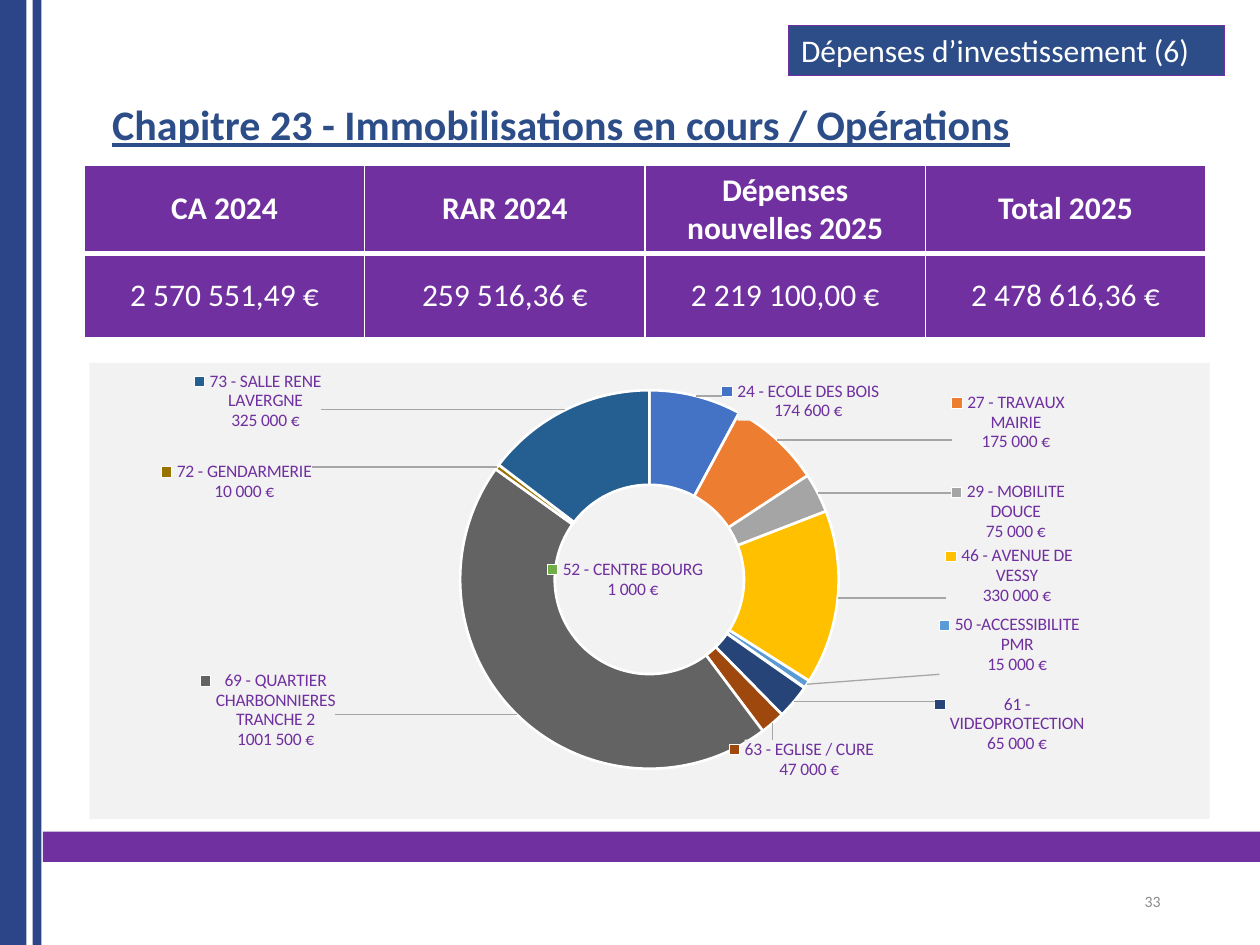
import copy
import math

import lxml.etree
import pptx
import pptx.chart.data
import pptx.dml.color
import pptx.enum.chart
import pptx.enum.shapes
import pptx.enum.text
import pptx.oxml
import pptx.oxml.ns
import pptx.util

Inches = pptx.util.Inches
Pt = pptx.util.Pt
RGBColor = pptx.dml.color.RGBColor
Align = pptx.enum.text.PP_ALIGN
Anchor = pptx.enum.text.MSO_ANCHOR

PURPLE = RGBColor(0x70, 0x30, 0xA0)
BAR_BLUE = RGBColor(0x2C, 0x45, 0x88)
TITLE_BLUE = RGBColor(0x2C, 0x4D, 0x88)
WHITE = RGBColor(0xFF, 0xFF, 0xFF)
GREY = RGBColor(0x8C, 0x8C, 0x8C)
LEADER_GREY = RGBColor(0xA6, 0xA6, 0xA6)
PALE = RGBColor(0xF2, 0xF2, 0xF2)
BLACK = RGBColor(0, 0, 0)
NAMESPACES = pptx.oxml.ns.nsdecls("c", "a")


def format_font(font, color, **formats):
    font.color.rgb = color
    for name, value in {"name": "Calibri", **formats}.items():
        setattr(font, name, value)


def add_bar(left, top, width, height, color):
    bar = page.shapes.add_shape(
        pptx.enum.shapes.MSO_SHAPE.RECTANGLE,
        Inches(left), Inches(top), Inches(width), Inches(height))
    bar.shadow.inherit = False
    bar.fill.solid()
    bar.fill.fore_color.rgb = color
    bar.line.fill.background()
    return bar


deck = pptx.Presentation()
deck.slide_width, deck.slide_height = Inches(10), Inches(7.5)
page = deck.slides.add_slide(deck.slide_layouts[5])

# Coloured bars
add_bar(0.34, 6.6, 9.66, 0.24, PURPLE)
add_bar(0, 0, 0.21, 7.5, BAR_BLUE)
add_bar(0.26, 0, 0.07, 7.5, BAR_BLUE)

# Chapter title
title = page.shapes.title
title.left, title.top = Inches(0.67), Inches(0.78)
title.width, title.height = Inches(9.15), Inches(0.63)
title.text_frame.text = "Chapitre 23 - Immobilisations en cours / Opérations"
title.text_frame.vertical_anchor = Anchor.TOP
para = title.text_frame.paragraphs[0]
para.alignment = Align.LEFT
para.line_spacing = 0.9
para._p.get_or_add_pPr().set("marL", str(Inches(0.12)))
format_font(para.font, TITLE_BLUE, size=Pt(24), bold=True, underline=True)

# Section tag
tag = add_bar(6.26, 0.2, 3.46, 0.4, TITLE_BLUE)
tag.line.color.rgb = PURPLE
tag.line.width = Pt(0.75)
tag.text_frame.text = "Dépenses d’investissement (6)"
para = tag.text_frame.paragraphs[0]
para.alignment = Align.LEFT
format_font(para.font, WHITE, size=Pt(18))

# Page number
number = page.shapes.add_textbox(Inches(7.06), Inches(6.95), Inches(2.25), Inches(0.4))
number.text_frame.word_wrap = True
number.text_frame.vertical_anchor = Anchor.MIDDLE
number.text_frame.text = "33"
para = number.text_frame.paragraphs[0]
para.alignment = Align.RIGHT
format_font(para.font, GREY, size=Pt(9))

# Amounts table
rows = [
    ["CA 2024", "RAR 2024", "Dépenses nouvelles 2025", "Total 2025"],
    ["2 570 551,49 €", "259 516,36 €", "2 219 100,00 €", "2 478 616,36 €"],
]
table = page.shapes.add_table(
    2, 4, Inches(0.67), Inches(1.31), Inches(8.9), Inches(1.33)).table
table.rows[0].height, table.rows[1].height = Inches(0.66), Inches(0.67)
for row, texts in enumerate(rows):
    for column, text in enumerate(texts):
        cell = table.cell(row, column)
        cell.text = text
        cell.vertical_anchor = Anchor.MIDDLE
        cell.fill.solid()
        cell.fill.fore_color.rgb = PURPLE
        para = cell.text_frame.paragraphs[0]
        para.alignment = Align.CENTER
        format_font(para.font, WHITE, size=Pt(18), bold=row == 0)
        # The rule between the two rows is thicker
        widths = {"L": 1, "R": 1, "T": 3 if row else 1, "B": 1 if row else 3}
        for place, (side, width) in enumerate(widths.items()):
            border = pptx.oxml.parse_xml(
                f'<a:ln{side} {NAMESPACES} w="{Pt(width)}"><a:solidFill>'
                f'<a:srgbClr val="{WHITE}"/></a:solidFill></a:ln{side}>')
            cell._tc.get_or_add_tcPr().insert(place, border)

# Operations: name, amount, colour, label centre in inches, label width share
operations = [
    ("24 - ECOLE DES BOIS", 174600, "4472C4", 6.31, 3.17, 0.16),
    ("27 - TRAVAUX MAIRIE", 175000, "ED7D31", 7.96, 3.34, 0.16),
    ("29 - MOBILITE DOUCE", 75000, "A5A5A5", 7.96, 4.05, 0.12),
    ("46 - AVENUE DE VESSY", 330000, "FFC000", 7.97, 4.56, 0.12),
    ("50 -ACCESSIBILITE PMR", 15000, "5B9BD5", 7.97, 5.11, 0.12),
    ("52 - CENTRE BOURG", 1000, "70AD47", 4.92, 4.59, 0.16),
    ("61 - VIDEOPROTECTION", 65000, "264478", 7.97, 5.74, 0.13),
    ("63 - EGLISE / CURE", 47000, "9E480E", 6.32, 6.02, 0.16),
    ("69 - QUARTIER CHARBONNIERES TRANCHE 2", 1001500, "636363", 2.08, 5.63, 0.12),
    ("72 - GENDARMERIE", 10000, "997300", 1.83, 3.81, 0.16),
    ("73 - SALLE RENE LAVERGNE", 325000, "255E91", 2.0, 3.17, 0.12),
]
chart_data = pptx.chart.data.CategoryChartData(number_format='#\\ ##0\\ "€"')
chart_data.categories = [operation[0] for operation in operations]
chart_data.add_series("Series 1", [operation[1] for operation in operations])
chart_width, chart_height = 8.89, 3.62
chart = page.shapes.add_chart(
    pptx.enum.chart.XL_CHART_TYPE.DOUGHNUT, Inches(0.71), Inches(2.88),
    Inches(chart_width), Inches(chart_height), chart_data).chart
chart.has_legend = False
chart.has_title = False
format_font(chart.font, BLACK, size=Pt(10))
chart.plots[0].vary_by_categories = True
chart.element.xpath(".//c:holeSize")[0].set("val", "75")

# Chart background and ring position
background = pptx.oxml.parse_xml(
    f'<c:spPr {NAMESPACES}><a:solidFill><a:srgbClr val="{PALE}"/></a:solidFill>'
    '<a:ln><a:noFill/></a:ln></c:spPr>')
chart.element.xpath("c:chart")[0].addnext(copy.deepcopy(background))
plot_area = chart.element.xpath(".//c:plotArea")[0]
for layout in plot_area.xpath("c:layout"):
    plot_area.remove(layout)
plot_area.insert(0, pptx.oxml.parse_xml(
    f'<c:layout {NAMESPACES}><c:manualLayout><c:layoutTarget val="inner"/>'
    '<c:xMode val="edge"/><c:yMode val="edge"/><c:x val="0.33"/><c:y val="0.06"/>'
    '<c:w val="0.34"/><c:h val="0.83"/></c:manualLayout></c:layout>'))

# Shared label format
series = chart.plots[0].series[0]
labels = series.data_labels
for name, value in {
    "number_format": '#\\ ##0\\ "€"', "number_format_is_linked": False,
    "show_value": True, "show_category_name": True, "show_legend_key": True,
    "show_percentage": False,
}.items():
    setattr(labels, name, value)
format_font(labels.font, PURPLE, size=Pt(10))
label_list = chart.element.xpath(".//c:ser/c:dLbls")[0]
label_list.xpath("c:numFmt")[0].addnext(background)
separator = pptx.oxml.parse_xml(f"<c:separator {NAMESPACES}>\n</c:separator>")
label_list.xpath("c:showBubbleSize")[0].addnext(separator)
for old in label_list.xpath("c:showLeaderLines | c:leaderLines"):
    label_list.remove(old)
shared = list(label_list)
for tag_xml in (
    '<c:showLeaderLines {0} val="1"/>',
    '<c:leaderLines {0}><c:spPr><a:ln w="9525"><a:solidFill><a:srgbClr val="{1}"/>'
    '</a:solidFill></a:ln></c:spPr></c:leaderLines>',
):
    label_list.append(pptx.oxml.parse_xml(tag_xml.format(NAMESPACES, LEADER_GREY)))

# Slices, with each label moved from the middle of its ring segment
center_x, center_y, middle_radius = 5.11, 4.59, 1.13
total = sum(operation[1] for operation in operations)
done = 0
for index, (name, amount, color, x, y, share) in enumerate(operations):
    point = series.points[index].format
    point.fill.solid()
    point.fill.fore_color.rgb = RGBColor.from_string(color)
    point.line.color.rgb = WHITE
    point.line.width = Pt(1.5)
    angle = 2 * math.pi * (done + amount / 2) / total
    done += amount
    shift_x = (x - center_x - middle_radius * math.sin(angle)) / chart_width
    shift_y = (y - center_y + middle_radius * math.cos(angle)) / chart_height
    label = pptx.oxml.parse_xml(
        f'<c:dLbl {NAMESPACES}><c:idx val="{index}"/><c:layout><c:manualLayout>'
        f'<c:x val="{shift_x:.4f}"/><c:y val="{shift_y:.4f}"/>'
        '</c:manualLayout></c:layout></c:dLbl>')
    label.extend(copy.deepcopy(shared))
    label.append(pptx.oxml.parse_xml(
        f'<c:extLst {NAMESPACES}><c:ext uri="{{CE6537A1-D6FC-4f65-9D91-7224C49458BB}}" '
        'xmlns:c15="http://schemas.microsoft.com/office/drawing/2012/chart">'
        f'<c15:layout><c:manualLayout><c:w val="{share}"/><c:h val="0.13"/>'
        '</c:manualLayout></c15:layout></c:ext></c:extLst>'))
    label_list.insert(index, label)

deck.save("out.pptx")
